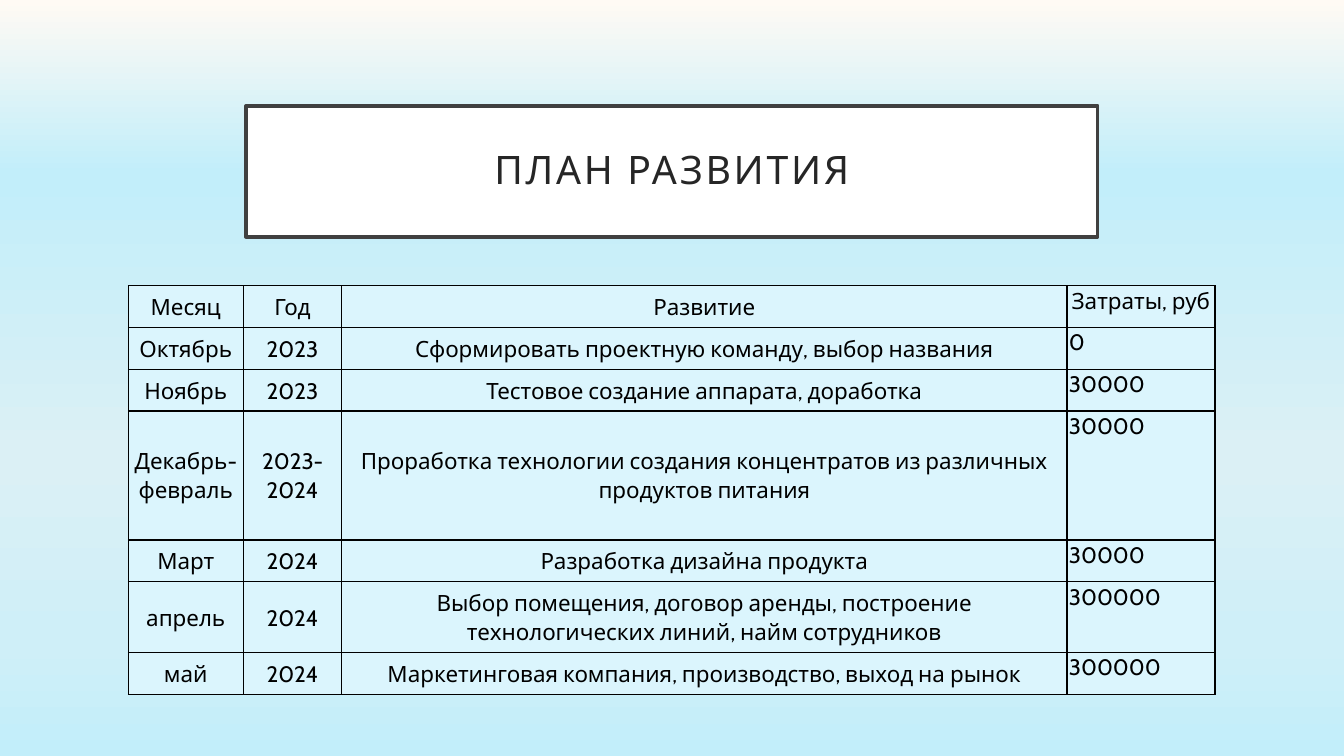
"""Build the development plan slide with its schedule and cost table."""
from lxml.etree import SubElement
from pptx import Presentation
from pptx.dml.color import RGBColor
from pptx.enum.text import MSO_ANCHOR, MSO_AUTO_SIZE, PP_ALIGN
from pptx.oxml.ns import qn
from pptx.util import Pt

TITLE = "ПЛАН РАЗВИТИЯ"
ROWS = [
    ("Месяц", "Год", "Развитие", "Затраты, руб"),
    ("Октябрь", "2023", "Сформировать проектную команду, выбор названия", "0"),
    ("Ноябрь", "2023", "Тестовое создание аппарата, доработка", "30000"),
    ("Декабрь-февраль", "2023-2024",
     "Проработка технологии создания концентратов из различных продуктов питания", "30000"),
    ("Март", "2024", "Разработка дизайна продукта", "30000"),
    ("апрель", "2024",
     "Выбор помещения, договор аренды, построение технологических линий, найм сотрудников",
     "300000"),
    ("май", "2024", "Маркетинговая компания, производство, выход на рынок", "300000"),
]
COLUMN_WIDTHS = [82, 70.5, 518, 105.7]
ROW_HEIGHTS = [29.8, 29.8, 29.8, 92.2, 29.8, 50.5, 29.8]
COST_COLUMN = 3
FONT = "Cabin"
COLORS = {"white": "FFFFFF", "frame": "404040", "title": "262626",
          "text": "000000", "border": "000000", "cell": "DBF5FD"}
GRADIENT = [(0, "FFFAF4", 100), (23, "C2EEFA", 100), (60, "DBF0F5", 47),
            (85, "CFEFF8", 35), (100, "C2EEFA", 100)]


def color(name):
    return RGBColor.from_string(COLORS[name])


def paint_background(slide):
    fill = slide.background.fill
    fill.gradient()
    fill.gradient_angle = 270
    stops = next(slide.element.iter(qn("a:gsLst")))
    for stop in list(stops):
        stops.remove(stop)
    for position, value, opacity in GRADIENT:
        stop = SubElement(stops, qn("a:gs"), pos=str(position * 1000))
        shade = SubElement(stop, qn("a:srgbClr"), val=value)
        if opacity < 100:
            SubElement(shade, qn("a:alpha"), val=str(opacity * 1000))


def write(paragraph, text, size, color_name, alignment, spacing):
    paragraph.alignment = alignment
    paragraph.line_spacing = spacing
    run = paragraph.add_run()
    run.text = text
    run.font.name = FONT
    run.font.size = Pt(size)
    run.font.color.rgb = color(color_name)
    return run


def set_margins(target, horizontal, vertical):
    target.margin_left = target.margin_right = Pt(horizontal)
    target.margin_top = target.margin_bottom = Pt(vertical)


def add_title(slide):
    title = slide.shapes.title
    title.left, title.top, title.width, title.height = Pt(175.7), Pt(75.6), Pt(608.4), Pt(93.6)
    title.fill.solid()
    title.fill.fore_color.rgb = color("white")
    title.line.color.rgb = color("frame")
    title.line.width = Pt(2.5)
    frame = title.text_frame
    frame.word_wrap = True
    frame.auto_size = MSO_AUTO_SIZE.NONE
    frame.vertical_anchor = MSO_ANCHOR.MIDDLE
    set_margins(frame, 14.4, 14.4)
    run = write(frame.paragraphs[0], TITLE, 28, "title", PP_ALIGN.CENTER, 0.9)
    run.font._element.set("spc", "200")


def add_borders(cell):
    properties = cell._tc.get_or_add_tcPr()
    for index, side in enumerate(("lnL", "lnR", "lnT", "lnB")):
        line = properties.makeelement(qn(f"a:{side}"), {"w": str(Pt(1))})
        properties.insert(index, line)
        fill = SubElement(line, qn("a:solidFill"))
        SubElement(fill, qn("a:srgbClr"), val=COLORS["border"])


def add_plan(slide):
    table = slide.shapes.add_table(
        len(ROWS), len(COLUMN_WIDTHS), Pt(91.7), Pt(204.2),
        Pt(sum(COLUMN_WIDTHS)), Pt(sum(ROW_HEIGHTS))).table
    table.first_row = table.horz_banding = False
    for column, width in zip(table.columns, COLUMN_WIDTHS):
        column.width = Pt(width)
    for row_index, (row, height, texts) in enumerate(zip(table.rows, ROW_HEIGHTS, ROWS)):
        row.height = Pt(height)
        for column_index, (cell, text) in enumerate(zip(row.cells, texts)):
            is_cost = column_index == COST_COLUMN
            is_amount = is_cost and row_index > 0
            cell.fill.solid()
            cell.fill.fore_color.rgb = color("cell")
            cell.vertical_anchor = MSO_ANCHOR.TOP if is_cost else MSO_ANCHOR.MIDDLE
            set_margins(cell, 1.4, 0)
            add_borders(cell)
            alignment = PP_ALIGN.LEFT if is_amount else PP_ALIGN.CENTER
            write(cell.text_frame.paragraphs[0], text, 16, "text", alignment, 1.07)


def main():
    presentation = Presentation()
    presentation.slide_width, presentation.slide_height = Pt(960), Pt(540)
    slide = presentation.slides.add_slide(presentation.slide_layouts[5])
    paint_background(slide)
    add_title(slide)
    add_plan(slide)
    presentation.save("out.pptx")


if __name__ == "__main__":
    main()
